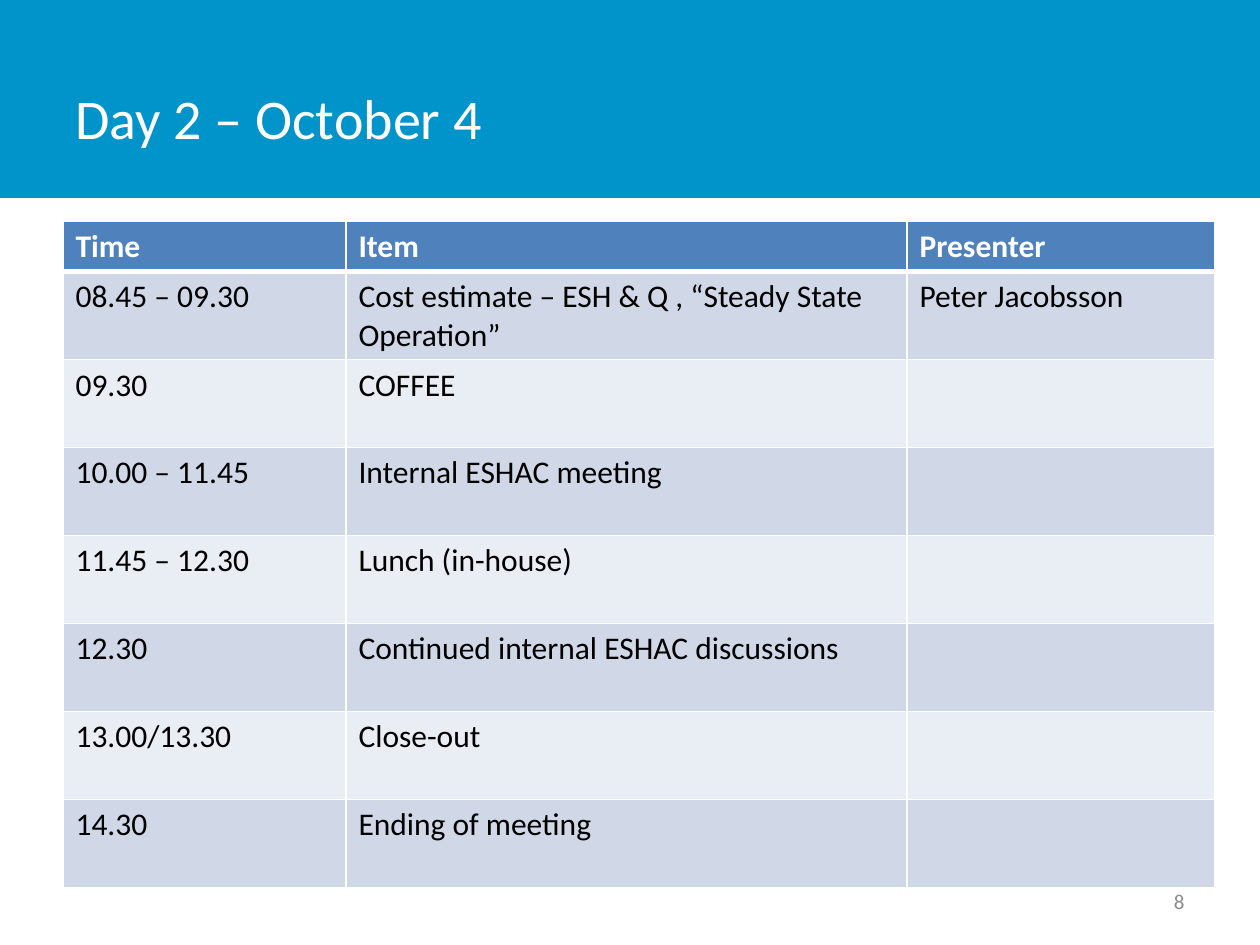
import dataclasses
import lxml.etree
import pptx
import pptx.dml.color
import pptx.enum.shapes
import pptx.enum.text
import pptx.oxml.ns
import pptx.util

SCALE = 914400 / 126  # EMU in one px


@dataclasses.dataclass(frozen=True)
class Theme:
    font: str = "Calibri"
    band: str = "0094CA"
    head: str = "4F81BD"
    odd: str = "D0D8E8"
    even: str = "E9EDF4"
    white: str = "FFFFFF"
    black: str = "000000"
    grey: str = "8C8C8C"
    title: int = 32
    body: int = 18
    small: int = 12
    thin: int = 1
    thick: int = 3


@dataclasses.dataclass(frozen=True)
class Box:
    left: int
    top: int
    width: int
    height: int

    def emu(self) -> list[int]:
        return [px(n) for n in dataclasses.astuple(self)]


@dataclasses.dataclass(frozen=True)
class Slot:
    time: str
    item: str
    who: str = ""


THEME = Theme()
COLS = (283, 561, 308)
HEAD, ROW = 50, 88
SLOTS = (
    Slot("Time", "Item", "Presenter"),
    Slot("08.45 – 09.30", "Cost estimate – ESH & Q , “Steady State Operation”", "Peter Jacobsson"),
    Slot("09.30", "COFFEE"),
    Slot("10.00 – 11.45", "Internal ESHAC meeting"),
    Slot("11.45 – 12.30", "Lunch (in-house)"),
    Slot("12.30", "Continued internal ESHAC discussions"),
    Slot("13.00/13.30", "Close-out"),
    Slot("14.30", "Ending of meeting"),
)


def px(n: int) -> int:
    return round(n * SCALE)


def rgb(code: str) -> pptx.dml.color.RGBColor:
    return pptx.dml.color.RGBColor.from_string(code)


def style(frame, size: int, color: str, bold: bool = False) -> None:
    font = frame.paragraphs[0].font
    for part in [font] + [run.font for run in frame.paragraphs[0].runs]:
        part.name = THEME.font
        part.size = pptx.util.Pt(size)
        part.bold = bold
        part.color.rgb = rgb(color)


def label(slide, box: Box, text: str, size: int, color: str, right: bool = False) -> None:
    frame = slide.shapes.add_textbox(*box.emu()).text_frame
    frame.word_wrap = True
    frame.vertical_anchor = pptx.enum.text.MSO_ANCHOR.MIDDLE
    frame.text = text
    if right:
        frame.paragraphs[0].alignment = pptx.enum.text.PP_ALIGN.RIGHT
    style(frame, size, color)


def edge(cell, side: str, width: int) -> None:
    qn = pptx.oxml.ns.qn
    props = cell._tc.get_or_add_tcPr()
    line = lxml.etree.SubElement(props, qn(f"a:ln{side}"), w=str(pptx.util.Pt(width)))
    fill = lxml.etree.SubElement(line, qn("a:solidFill"))
    lxml.etree.SubElement(fill, qn("a:srgbClr"), val=THEME.white)


def paint(cell, text: str, row: int) -> None:
    top = THEME.thick if row == 1 else THEME.thin
    base = THEME.thick if row == 0 else THEME.thin
    for side, width in zip("LRTB", (THEME.thin, THEME.thin, top, base)):
        edge(cell, side, width)
    cell.fill.solid()
    cell.text_frame.text = text
    if row == 0:
        cell.fill.fore_color.rgb = rgb(THEME.head)
        style(cell.text_frame, THEME.body, THEME.white, True)
    else:
        cell.fill.fore_color.rgb = rgb(THEME.odd if row % 2 else THEME.even)
        style(cell.text_frame, THEME.body, THEME.black)


def agenda(slide, left: int, top: int) -> None:
    box = Box(left, top, sum(COLS), HEAD + ROW * (len(SLOTS) - 1))
    table = slide.shapes.add_table(len(SLOTS), len(COLS), *box.emu()).table
    for col, width in zip(table.columns, COLS):
        col.width = px(width)
    for i, slot in enumerate(SLOTS):
        table.rows[i].height = px(ROW if i else HEAD)
        for j, text in enumerate(dataclasses.astuple(slot)):
            paint(table.cell(i, j), text, i)


def main() -> None:
    deck = pptx.Presentation()
    deck.slide_width, deck.slide_height = px(1260), px(945)
    slide = deck.slides.add_slide(deck.slide_layouts[6])

    # Title band
    kind = pptx.enum.shapes.MSO_SHAPE.RECTANGLE
    band = slide.shapes.add_shape(kind, *Box(0, 0, 1260, 198).emu())
    band.shadow.inherit = False
    band.fill.solid()
    band.fill.fore_color.rgb = rgb(THEME.band)
    band.line.fill.background()
    label(slide, Box(63, 38, 984, 158), "Day 2 – October 4", THEME.title, THEME.white)

    # Agenda table
    agenda(slide, 63, 221)

    # Page number
    label(slide, Box(903, 876, 294, 50), "8", THEME.small, THEME.grey, right=True)
    deck.save("out.pptx")


if __name__ == "__main__":
    main()
